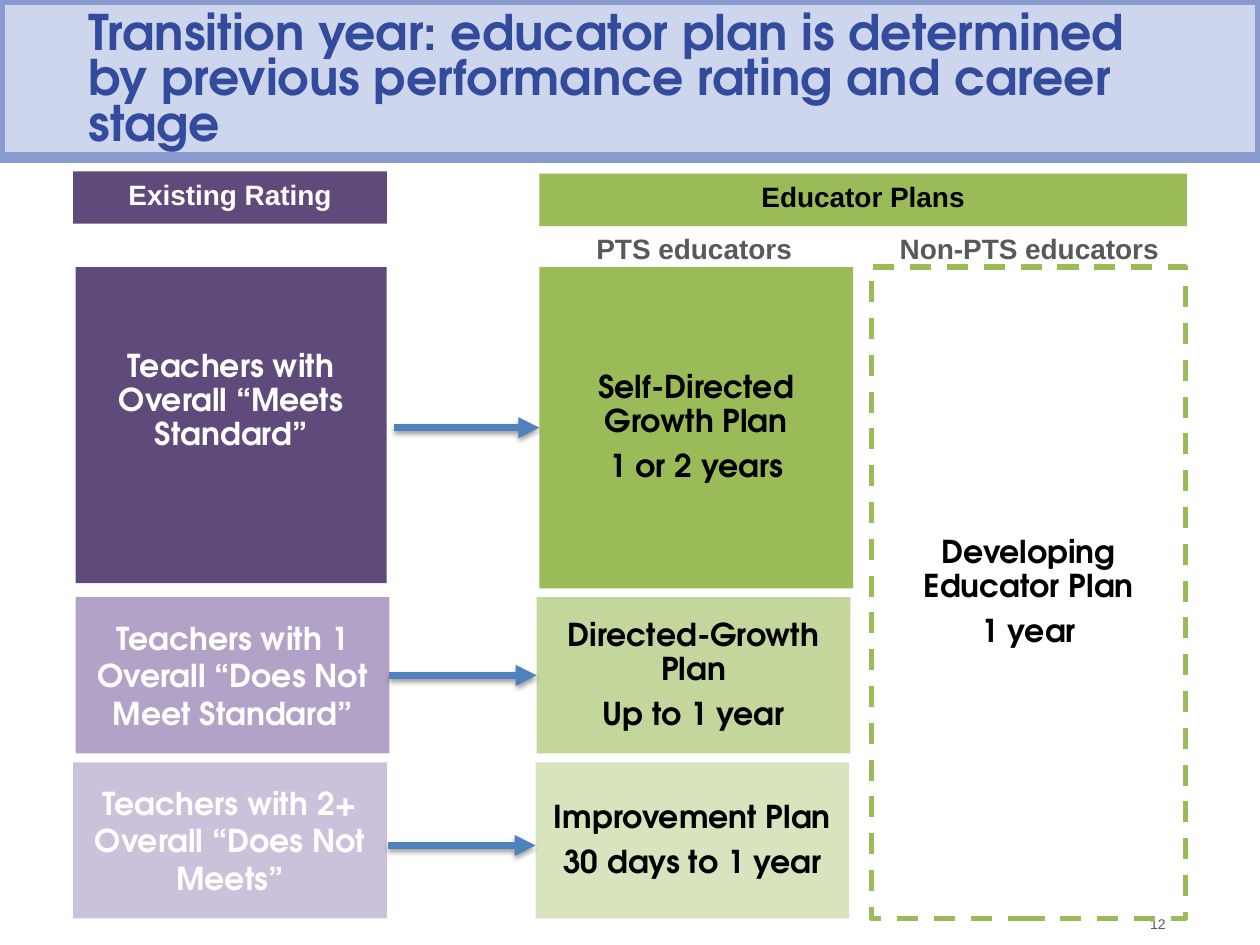
from lxml import etree
from pptx import Presentation
from pptx.dml.color import RGBColor
from pptx.enum.dml import MSO_LINE
from pptx.enum.shapes import MSO_CONNECTOR, MSO_SHAPE
from pptx.enum.text import MSO_ANCHOR, PP_ALIGN
from pptx.oxml.ns import qn
from pptx.util import Pt

RECT = MSO_SHAPE.RECTANGLE
STRAIGHT = MSO_CONNECTOR.STRAIGHT
DASH = MSO_LINE.DASH
TOP, MIDDLE, BOTTOM = MSO_ANCHOR.TOP, MSO_ANCHOR.MIDDLE, MSO_ANCHOR.BOTTOM
LEFT, CENTER, RIGHT = PP_ALIGN.LEFT, PP_ALIGN.CENTER, PP_ALIGN.RIGHT
SIDE_LEFT, SIDE_RIGHT = 1, 3

SANS, GEOMETRIC = "Arial", "TeX Gyre Adventor"
COLORS = {
    "title": "334B9C", "title_fill": "CED6ED", "title_line": "899ACE",
    "purple": "604A7B", "purple_mid": "B3A2C7", "purple_light": "CCC1DA",
    "green": "9BBB59", "green_mid": "C3D69B", "green_light": "D7E4BD",
    "arrow": "4F81BD", "white": "FFFFFF", "black": "000000", "gray": "595959",
}


def rgb(name):
    return RGBColor.from_string(COLORS[name])


def write(sp, lines, font, size, color, align=CENTER, anchor=TOP, bold=True,
          insets=(7.2, 3.6, 7.2, 3.6), **spacing):
    tf = sp.text_frame
    frame = {"word_wrap": True, "vertical_anchor": anchor}
    frame.update(zip(("margin_left", "margin_top", "margin_right", "margin_bottom"),
                     map(Pt, insets)))
    for key, value in frame.items():
        setattr(tf, key, value)
    for i, line in enumerate(lines):
        p = tf.paragraphs[0] if i == 0 else tf.add_paragraph()
        for key, value in {"alignment": align, **spacing}.items():
            setattr(p, key, value)
        r = p.add_run()
        for key, value in {"name": font, "size": Pt(size), "bold": bold}.items():
            setattr(r.font, key, value)
        r.font.color.rgb = rgb(color)
        r.text = line


prs = Presentation()
prs.slide_width, prs.slide_height = Pt(720), Pt(540)
s = prs.slides.add_slide(prs.slide_layouts[5])

# Title band
title = s.shapes.title
title.left, title.top, title.width, title.height = Pt(0), Pt(0), Pt(720), Pt(90)
title.fill.solid()
title.fill.fore_color.rgb = rgb("title_fill")
title.line.color.rgb = rgb("title_line")
title.line.width = Pt(6)
write(title, ["Transition year: educator plan is determined by previous "
              "performance rating and career stage"],
      GEOMETRIC, 28, "title", LEFT, BOTTOM, insets=(50.4, 0, 36, 3.6),
      line_spacing=Pt(26), space_before=Pt(0))

# Column headers
for text, x, y, w, fill, color in [
    ("Existing Rating", 41.8, 97.9, 179.3, "purple", "white"),
    ("Educator Plans", 308.2, 99.2, 370, "green", "black"),
]:
    sp = s.shapes.add_shape(RECT, Pt(x), Pt(y), Pt(w), Pt(30))
    sp.shadow.inherit = False
    sp.fill.solid()
    sp.fill.fore_color.rgb = rgb(fill)
    sp.line.fill.background()
    write(sp, [text], SANS, 16, color, space_before=Pt(6))

# Educator groups and slide number
for text, x, w in [("PTS educators", 308.2, 177), ("Non-PTS educators", 498.2, 180)]:
    sp = s.shapes.add_textbox(Pt(x), Pt(128.9), Pt(w), Pt(36))
    write(sp, [text], SANS, 16, "gray", space_before=Pt(6))
sp = s.shapes.add_textbox(Pt(632.2), Pt(519.1), Pt(41), Pt(17.3))
write(sp, ["12"], SANS, 8, "gray", RIGHT, MIDDLE, bold=False)

# Ratings and plans: lines, x, y, width, height, fill, text colour, line spacing, bottom inset
boxes = [
    (["Teachers with Overall “Meets Standard”"],
     43.2, 152.6, 177.8, 180.7, "purple", "white", 0.9, 30),
    (["Teachers with 1 Overall “Does Not Meet Standard”"],
     43.2, 341.3, 179.3, 89.3, "purple_mid", "white", 1, 3),
    (["Teachers with 2+ Overall “Does Not Meets”"],
     41.8, 435.6, 179.3, 89.3, "purple_light", "white", 1, 3),
    (["Self-Directed Growth Plan", "1 or 2 years"],
     308.2, 152.6, 179.3, 183.6, "green", "black", 0.9, 3),
    (["Directed-Growth Plan", "Up to 1 year"],
     306.7, 341.3, 179.3, 89.3, "green_mid", "black", 0.9, 3),
    (["Improvement Plan", "30 days to 1 year"],
     306, 435.6, 179.3, 89.3, "green_light", "black", 0.9, 3),
    (["Developing Educator Plan", "1 year"],
     498.2, 152.6, 179.3, 372.2, None, "black", 0.9, 3),
]
shapes = []
for lines, x, y, w, h, fill, color, spacing, bottom in boxes:
    sp = s.shapes.add_shape(RECT, Pt(x), Pt(y), Pt(w), Pt(h))
    sp.shadow.inherit = False
    if fill:
        sp.fill.solid()
        sp.fill.fore_color.rgb = rgb(fill)
        sp.line.fill.background()
    else:
        sp.fill.background()
        sp.line.color.rgb = rgb("green")
        sp.line.width = Pt(3)
        sp.line.dash_style = DASH
    write(sp, lines, GEOMETRIC, 18, color, anchor=MIDDLE, insets=(5, 3, 5, bottom),
          line_spacing=spacing, space_after=Pt(6.3 if spacing < 1 else 0))
    shapes.append(sp)

# Arrows from rating to plan: x1, x2, y, joined start, joined end
for x1, x2, y, start, end in [
    (225.4, 308.2, 244.4, None, shapes[3]),
    (222.5, 306.7, 385.95, shapes[1], shapes[4]),
    (221.8, 306, 483.1, None, None),
]:
    c = s.shapes.add_connector(STRAIGHT, Pt(x1), Pt(y), Pt(x2), Pt(y))
    if start:
        c.begin_connect(start, SIDE_RIGHT)
    if end:
        c.end_connect(end, SIDE_LEFT)
    c.line.color.rgb = rgb("arrow")
    c.line.width = Pt(4)
    etree.SubElement(c.line._get_or_add_ln(), qn("a:tailEnd"), type="triangle")
    effects = etree.SubElement(c._element.spPr, qn("a:effectLst"))
    shadow = etree.SubElement(effects, qn("a:outerShdw"), blurRad=str(Pt(3.1)),
                              dist=str(Pt(1.6)), dir="5400000", rotWithShape="0")
    tint = etree.SubElement(shadow, qn("a:srgbClr"), val=COLORS["black"])
    etree.SubElement(tint, qn("a:alpha"), val="38000")

prs.save("out.pptx")
